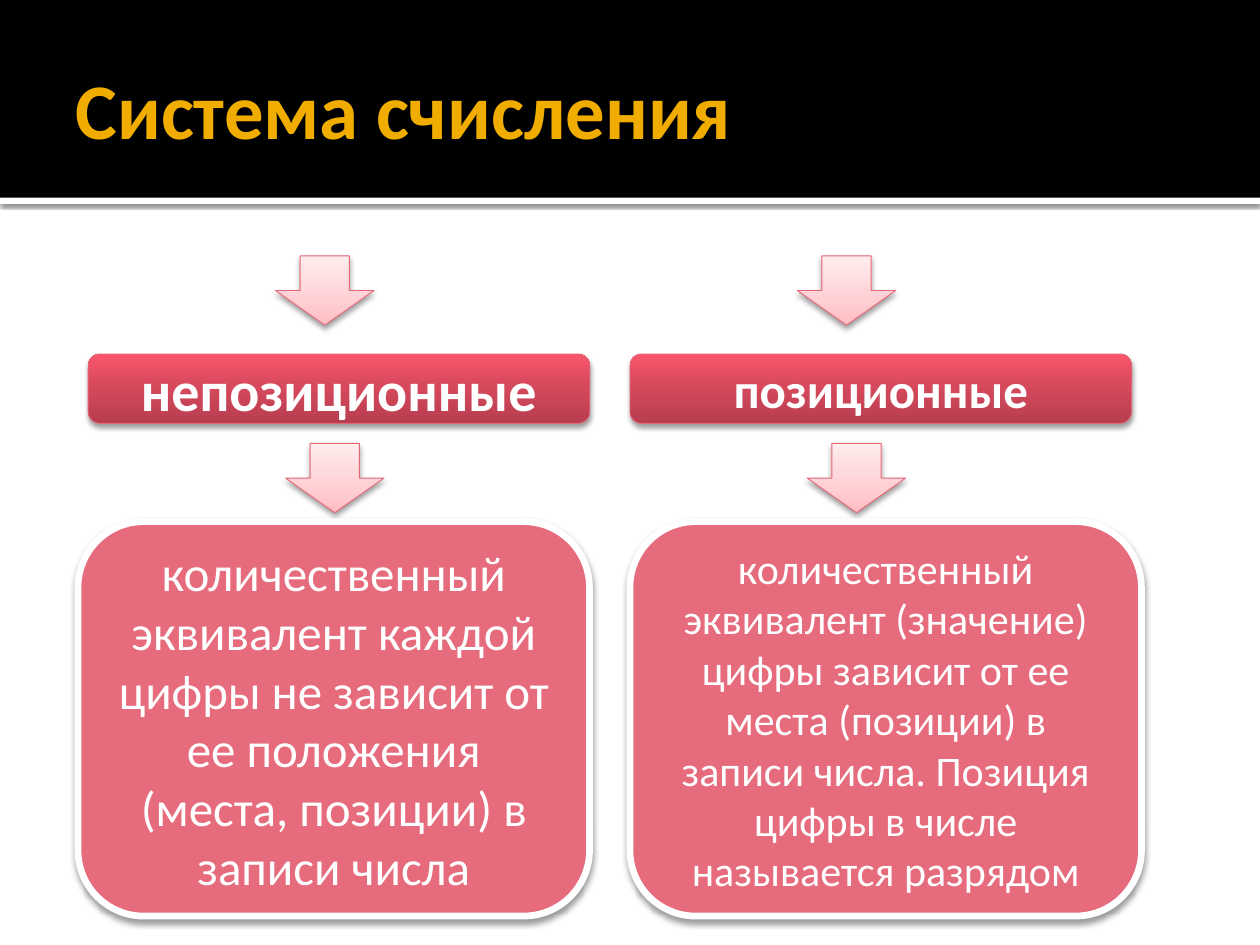
from typing import NamedTuple, Optional

from lxml.etree import SubElement
from pptx import Presentation
from pptx.dml.color import RGBColor
from pptx.enum.shapes import MSO_SHAPE as Preset
from pptx.enum.text import MSO_ANCHOR as Anchor, MSO_AUTO_SIZE as AutoSize, PP_ALIGN as Align
from pptx.oxml.ns import qn
from pptx.util import Pt

BLACK = RGBColor(0x00, 0x00, 0x00)
WHITE = RGBColor(0xFF, 0xFF, 0xFF)
GOLD = RGBColor(0xF0, 0xAD, 0x00)
ROSE = RGBColor(0xE6, 0x6C, 0x7D)
ROSE_LINE = RGBColor(0xE4, 0x67, 0x78)
# Gradient stops in percent, running from bottom to top
PALE_STOPS = {0: RGBColor(0xFF, 0xBC, 0xC2), 35: RGBColor(0xFF, 0xCF, 0xD3),
              100: RGBColor(0xFF, 0xED, 0xEE)}
DEEP_STOPS = {0: RGBColor(0xB7, 0x3E, 0x4F), 55: RGBColor(0xD7, 0x49, 0x5D),
              100: RGBColor(0xFA, 0x55, 0x6C)}
FONT = "Calibri"


class Area(NamedTuple):
    left: float
    top: float
    width: float
    height: float


class Shadow(NamedTuple):
    opacity: int
    blur: float
    distance: float


class Style(NamedTuple):
    preset: Preset
    fill: object  # one colour, or a dict of gradient stops
    line: Optional[RGBColor] = None
    line_width: float = 0
    shadow: Optional[Shadow] = None


class Branch(NamedTuple):
    upper_arrow: float
    lower_arrow: float
    name_left: float
    name: str
    name_size: int
    body_left: float
    body: str
    body_size: int


HEADER = Style(Preset.RECTANGLE, BLACK)
RULE = Style(Preset.RECTANGLE, WHITE, shadow=Shadow(60, 2.5, 0.8))
ARROW = Style(Preset.DOWN_ARROW, PALE_STOPS, ROSE_LINE, 0.5, Shadow(38, 3.5, 2))
NAME = Style(Preset.ROUNDED_RECTANGLE, DEEP_STOPS, ROSE_LINE, 0.5, Shadow(38, 3.1, 2))
BODY = Style(Preset.ROUNDED_RECTANGLE, ROSE, WHITE, 3.82, Shadow(38, 3.5, 2))

BRANCHES = [
    Branch(157.5, 163.2, 50.4, "непозиционные", 32, 44.6,
           "количественный эквивалент каждой цифры не зависит от ее положения "
           "(места, позиции) в записи числа", 28),
    Branch(455.6, 461.3, 360, "позиционные", 28, 360,
           "количественный эквивалент (значение) цифры зависит от ее места (позиции) "
           "в записи числа. Позиция цифры в числе называется разрядом", 24),
]


def add_color(parent, color: RGBColor):
    return SubElement(parent, qn("a:srgbClr"), val=str(color))


def set_gradient(shape, stops: dict) -> None:
    shape.fill.gradient()
    shape.fill.gradient_angle = 90
    stop_list = shape.element.spPr.find(qn("a:gradFill")).find(qn("a:gsLst"))
    stop_list.clear()
    for percent, color in stops.items():
        add_color(SubElement(stop_list, qn("a:gs"), pos=str(percent * 1000)), color)


def set_shadow(shape, shadow: Shadow) -> None:
    effects = shape.element.spPr.find(qn("a:effectLst"))
    outer = SubElement(effects, qn("a:outerShdw"), blurRad=str(Pt(shadow.blur)),
                       dist=str(Pt(shadow.distance)), dir="5400000", rotWithShape="0")
    SubElement(add_color(outer, BLACK), qn("a:alpha"), val=str(shadow.opacity * 1000))


def add_box(page, style: Style, area: Area):
    box = page.shapes.add_shape(style.preset, *map(Pt, area))
    if isinstance(style.fill, dict):
        set_gradient(box, style.fill)
    else:
        box.fill.solid()
        box.fill.fore_color.rgb = style.fill
    if style.line is None:
        box.line.fill.background()
    else:
        box.line.color.rgb = style.line
        box.line.width = Pt(style.line_width)
    box.shadow.inherit = False
    if style.shadow:
        set_shadow(box, style.shadow)
    return box


def write(box, text: str, size: float, color: RGBColor, bold: bool, align: Align) -> None:
    frame = box.text_frame
    frame.word_wrap = True
    frame.auto_size = AutoSize.NONE
    frame.vertical_anchor = Anchor.MIDDLE
    para = frame.paragraphs[0]
    para.alignment = align
    span = para.add_run()
    span.text = text
    span.font.color.rgb = color
    for key, value in {"name": FONT, "size": Pt(size), "bold": bold}.items():
        setattr(span.font, key, value)


def add_title(page, text: str, area: Area) -> None:
    title = page.shapes.title
    for key, value in area._asdict().items():
        setattr(title, key, Pt(value))
    write(title, text, 45, GOLD, True, Align.LEFT)
    insets = {"margin_left": 7.2, "margin_top": 3.6, "margin_right": 3.6, "margin_bottom": 3.6}
    for key, value in insets.items():
        setattr(title.text_frame, key, Pt(value))
    # Bring the title in front of the header band
    title.element.getparent().append(title.element)


def add_branch(page, branch: Branch) -> None:
    add_box(page, ARROW, Area(branch.upper_arrow, 146.2, 56.2, 39.6))
    name = add_box(page, NAME, Area(branch.name_left, 202.3, 286.6, 39.6))
    write(name, branch.name, branch.name_size, WHITE, True, Align.CENTER)
    add_box(page, ARROW, Area(branch.lower_arrow, 253.4, 56.2, 39.6))
    body = add_box(page, BODY, Area(branch.body_left, 298.1, 292.3, 225.4))
    write(body, branch.body, branch.body_size, WHITE, False, Align.CENTER)


def main() -> None:
    deck = Presentation()
    deck.slide_width, deck.slide_height = Pt(720), Pt(540)
    page = deck.slides.add_slide(deck.slide_layouts.get_by_name("Title Only"))

    # Header
    add_box(page, RULE, Area(0, 113, 720, 3.6))
    add_box(page, HEADER, Area(0, 0, 720, 113))
    add_title(page, "Система счисления", Area(36, 12.2, 648, 98.6))

    # The two kinds of number system
    for branch in BRANCHES:
        add_branch(page, branch)

    deck.save("out.pptx")


if __name__ == "__main__":
    main()
